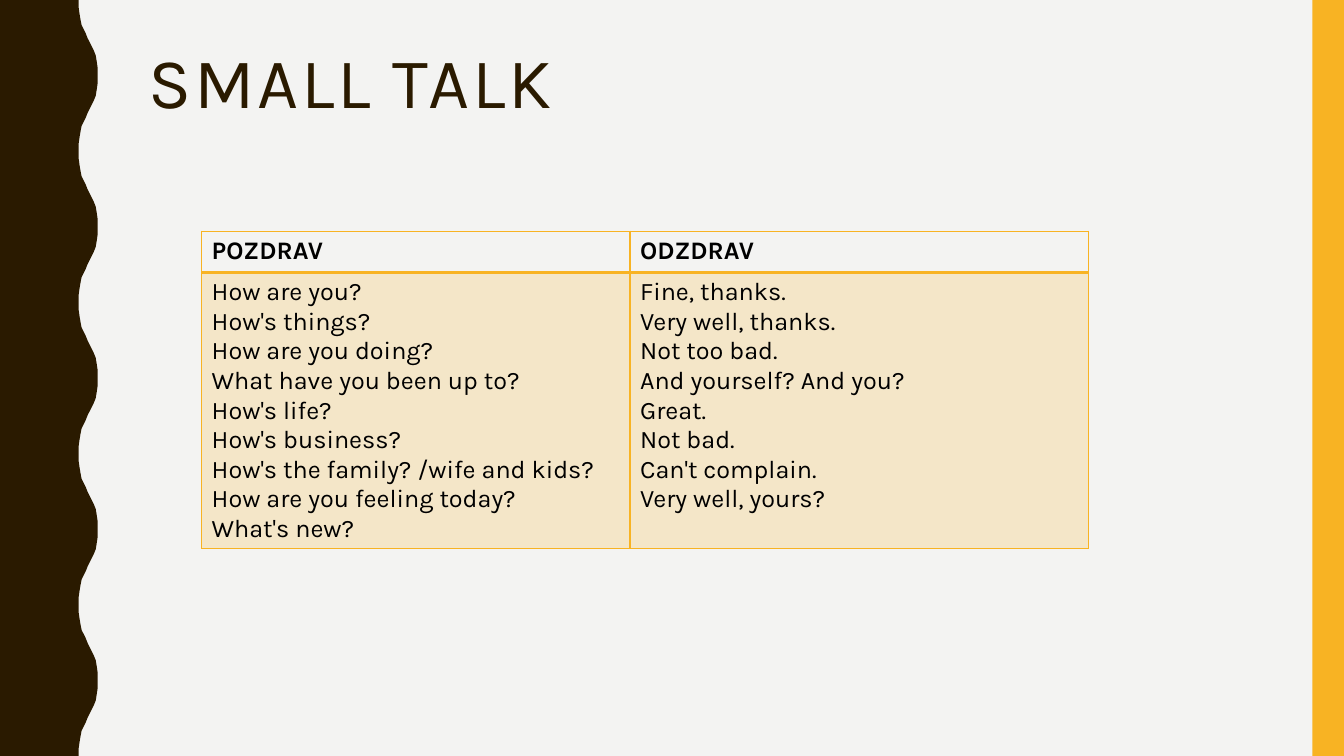
from lxml.etree import SubElement
from pptx import Presentation
from pptx.dml.color import RGBColor
from pptx.enum.shapes import MSO_SHAPE
from pptx.enum.text import MSO_ANCHOR, MSO_AUTO_SIZE, PP_ALIGN
from pptx.oxml.ns import qn
from pptx.util import Pt

FONT = "Karla"
BROWN, GOLD, PAPER, BLACK = "2A1A00", "F8B323", "F3F3F2", "000000"
WIDTH, HEIGHT = 960, 540
WAVE_LENGTH = 108
HALF_WAVE = [(56.16, 0), (56.16, 5.04), (56.88, 10.08), (57.6, 14.4), (58.32, 18),
             (59.76, 20.88), (61.2, 23.76), (62.64, 27.36), (64.08, 30.24),
             (65.52, 33.12), (66.96, 36), (68.4, 39.6), (69.12, 43.92),
             (69.84, 48.96), (69.84, 54)]
GREETINGS = [
    "How are you?\nHow's things?\nHow are you doing?\nWhat have you been up to?\n"
    "How's life?\nHow's business?\nHow's the family? /wife and kids?",
    "How are you feeling today?",
    "What's new?",
]
REPLIES = [
    "Fine, thanks.\nVery well, thanks.\nNot too bad.\nAnd yourself? And you?\n"
    "Great. \nNot bad. \nCan't complain.\nVery well, yours?",
]
ROWS = [[["POZDRAV"], ["ODZDRAV"]], [GREETINGS, REPLIES]]
COLUMN_WIDTHS = [306, 327.6]
ROW_HEIGHTS = [29.5, 197.3]


def rgb(color):
    """Turn a hex string into a colour."""
    return RGBColor.from_string(color)


def write(frame, paragraphs, size=18, color=BLACK, bold=False, spacing=0, line=None):
    """Fill a text frame with formatted paragraphs."""
    for index, words in enumerate(paragraphs):
        paragraph = frame.add_paragraph() if index else frame.paragraphs[0]
        paragraph.text = words
        paragraph.alignment = PP_ALIGN.LEFT
        if line:
            paragraph.line_spacing = line
        for run in paragraph.runs:
            run.font.name = FONT
            run.font.size = Pt(size)
            run.font.bold = bold
            run.font.color.rgb = rgb(color)
            if spacing:
                run.font._element.set("spc", str(spacing * 100))


def paint(shape, color):
    """Give a shape a plain fill without line or shadow."""
    shape.shadow.inherit = False
    shape.fill.solid()
    shape.fill.fore_color.rgb = rgb(color)
    shape.line.fill.background()


def add_wavy_edge(slide):
    """Draw the brown band with its repeating wave."""
    wave = HALF_WAVE + [(x, WAVE_LENGTH - y) for x, y in HALF_WAVE[-2::-1]]
    edge = [(Pt(x), Pt(y + start))
            for start in range(0, HEIGHT, WAVE_LENGTH) for x, y in wave]
    builder = slide.shapes.build_freeform(0, 0)
    builder.add_line_segments(edge + [(0, Pt(HEIGHT))], close=True)
    paint(builder.convert_to_shape(), BROWN)


def add_side_bar(slide):
    """Draw the gold bar on the right."""
    bar = slide.shapes.add_shape(MSO_SHAPE.RECTANGLE, Pt(937.5), 0, Pt(22.5), Pt(HEIGHT))
    paint(bar, GOLD)


def set_title(slide, words):
    """Place and format the title placeholder."""
    title = slide.shapes.title
    title.left, title.top, title.width, title.height = Pt(98.6), Pt(30.2), Pt(801.4), Pt(117.4)
    frame = title.text_frame
    frame.word_wrap = True
    frame.auto_size = MSO_AUTO_SIZE.NONE
    frame.vertical_anchor = MSO_ANCHOR.TOP
    write(frame, [words], size=51, color=BROWN, spacing=2, line=0.9)


def set_borders(cell, bottom):
    """Draw gold borders around a cell."""
    properties = cell._tc.get_or_add_tcPr()
    for side, width in (("L", 1), ("R", 1), ("T", 1), ("B", bottom)):
        border = SubElement(properties, qn(f"a:ln{side}"), w=str(Pt(width)))
        fill = SubElement(border, qn("a:solidFill"))
        SubElement(fill, qn("a:srgbClr"), val=GOLD)


def tint(cell, color, percent):
    """Fill a cell with a transparent colour."""
    cell.fill.solid()
    cell.fill.fore_color.rgb = rgb(color)
    swatch = cell._tc.tcPr.find(qn("a:solidFill")).find(qn("a:srgbClr"))
    SubElement(swatch, qn("a:alpha"), val=str(percent * 1000))


def add_phrase_table(slide):
    """Add the table of greetings and replies."""
    table = slide.shapes.add_table(len(ROWS), len(COLUMN_WIDTHS), Pt(144), Pt(165.2),
                                   Pt(sum(COLUMN_WIDTHS)), Pt(sum(ROW_HEIGHTS))).table
    table.horz_banding = False
    table.first_row = False
    for column, width in zip(table.columns, COLUMN_WIDTHS):
        column.width = Pt(width)
    for r, (phrases, height) in enumerate(zip(ROWS, ROW_HEIGHTS)):
        table.rows[r].height = Pt(height)
        header = r == 0
        for c, paragraphs in enumerate(phrases):
            cell = table.cell(r, c)
            write(cell.text_frame, paragraphs, bold=header)
            set_borders(cell, bottom=2 if header else 1)
            if header:
                cell.fill.background()
            else:
                tint(cell, GOLD, 20)


def main():
    """Build the slide and save it."""
    deck = Presentation()
    deck.slide_width, deck.slide_height = Pt(WIDTH), Pt(HEIGHT)
    slide = deck.slides.add_slide(deck.slide_layouts[5])
    slide.background.fill.solid()
    slide.background.fill.fore_color.rgb = rgb(PAPER)
    add_wavy_edge(slide)
    add_side_bar(slide)
    set_title(slide, "SMALL TALK")
    add_phrase_table(slide)
    deck.save("out.pptx")


if __name__ == "__main__":
    main()
